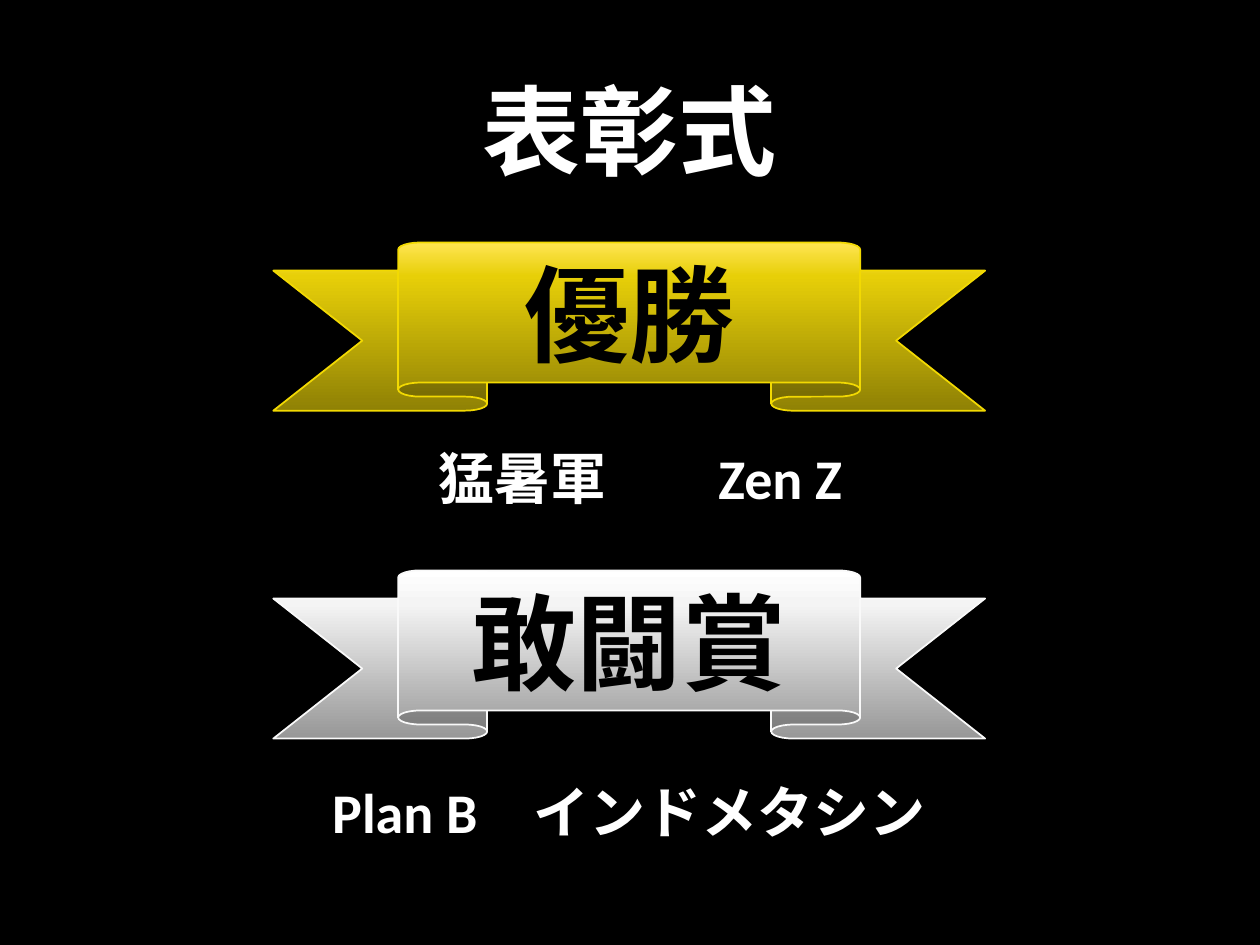
from copy import deepcopy

from pptx import Presentation
from pptx.dml.color import RGBColor
from pptx.enum.shapes import MSO_SHAPE as Shape
from pptx.enum.text import MSO_ANCHOR as Anchor, MSO_AUTO_SIZE as AutoSize, PP_ALIGN as Align
from pptx.oxml.ns import qn
from pptx.util import Cm, Pt

BLACK, WHITE = "000000", "FFFFFF"
GOLD = ("8F8105", "E7CF08", "FFE552")
SILVER = ("979797", "F4F4F4", "FFFFFF")
STOP_POSITIONS = (0, 0.8, 1)


def color(hex_code):
    return RGBColor.from_string(hex_code)


def format_paragraph(paragraph, size, font_name, hex_code):
    paragraph.alignment = Align.CENTER
    font = paragraph.font
    font.size, font.name, font.bold = Pt(size), font_name, True
    font.color.rgb = color(hex_code)


def set_title(slide, text):
    title = slide.shapes.title
    title.left, title.top, title.width, title.height = Cm(2.16), Cm(0.3), Cm(21.06), Cm(4.6)
    title.text_frame.text = text
    title.text_frame.vertical_anchor = Anchor.MIDDLE
    format_paragraph(title.text_frame.paragraphs[0], 56, "Calibri", WHITE)


def fill_upward(shape, hex_codes):
    """Fill with a three-colour gradient that runs from bottom to top."""
    shape.fill.gradient()
    shape.fill.gradient_angle = 90
    stop_list = shape._element.spPr.find(qn("a:gradFill")).find(qn("a:gsLst"))
    stop_list.append(deepcopy(stop_list[-1]))
    for stop, hex_code, position in zip(shape.fill.gradient_stops, hex_codes, STOP_POSITIONS):
        stop.color.rgb = color(hex_code)
        stop.position = position


def add_ribbon(slide, top, award, hex_codes, line_color):
    ribbon = slide.shapes.add_shape(Shape.UP_RIBBON, Cm(5.51), Cm(top), Cm(14.35), Cm(3.39))
    ribbon.adjustments[0], ribbon.adjustments[1] = 0.167, 0.649
    ribbon.shadow.inherit = False
    fill_upward(ribbon, hex_codes)
    ribbon.line.color.rgb = color(line_color)
    ribbon.line.width = Pt(1)
    ribbon.text_frame.text = award
    ribbon.text_frame.vertical_anchor = Anchor.MIDDLE
    format_paragraph(ribbon.text_frame.paragraphs[0], 60, "Roboto", BLACK)


def add_winners(slide, left, top, width, teams, extra_gap=0):
    """Write two team names on one line, with extra_gap points added to the space between."""
    box = slide.shapes.add_textbox(Cm(left), Cm(top), Cm(width), Cm(1.63))
    box.text_frame.word_wrap = True
    box.text_frame.auto_size = AutoSize.SHAPE_TO_FIT_TEXT
    paragraph = box.text_frame.paragraphs[0]
    first, second = teams
    for text in (first, "　", second):
        paragraph.add_run().text = text
    if extra_gap:
        paragraph.runs[1].font._element.set("spc", str(extra_gap * 100))
    format_paragraph(paragraph, 32, "Calibri", WHITE)


def main():
    presentation = Presentation()
    presentation.slide_width, presentation.slide_height = Cm(25.4), Cm(19.05)
    slide = presentation.slides.add_slide(presentation.slide_layouts[5])
    slide.background.fill.solid()
    slide.background.fill.fore_color.rgb = color(BLACK)

    set_title(slide, "表彰式")
    add_ribbon(slide, 4.89, "優勝", GOLD, "F2D902")
    add_winners(slide, 1.45, 8.81, 22.91, ("猛暑軍", "Zen Z"), extra_gap=32)
    add_ribbon(slide, 11.5, "敢闘賞", SILVER, "F9F9F9")
    add_winners(slide, 4.29, 15.54, 16.79, ("Plan B", "インドメタシン"))
    presentation.save("out.pptx")


if __name__ == "__main__":
    main()
